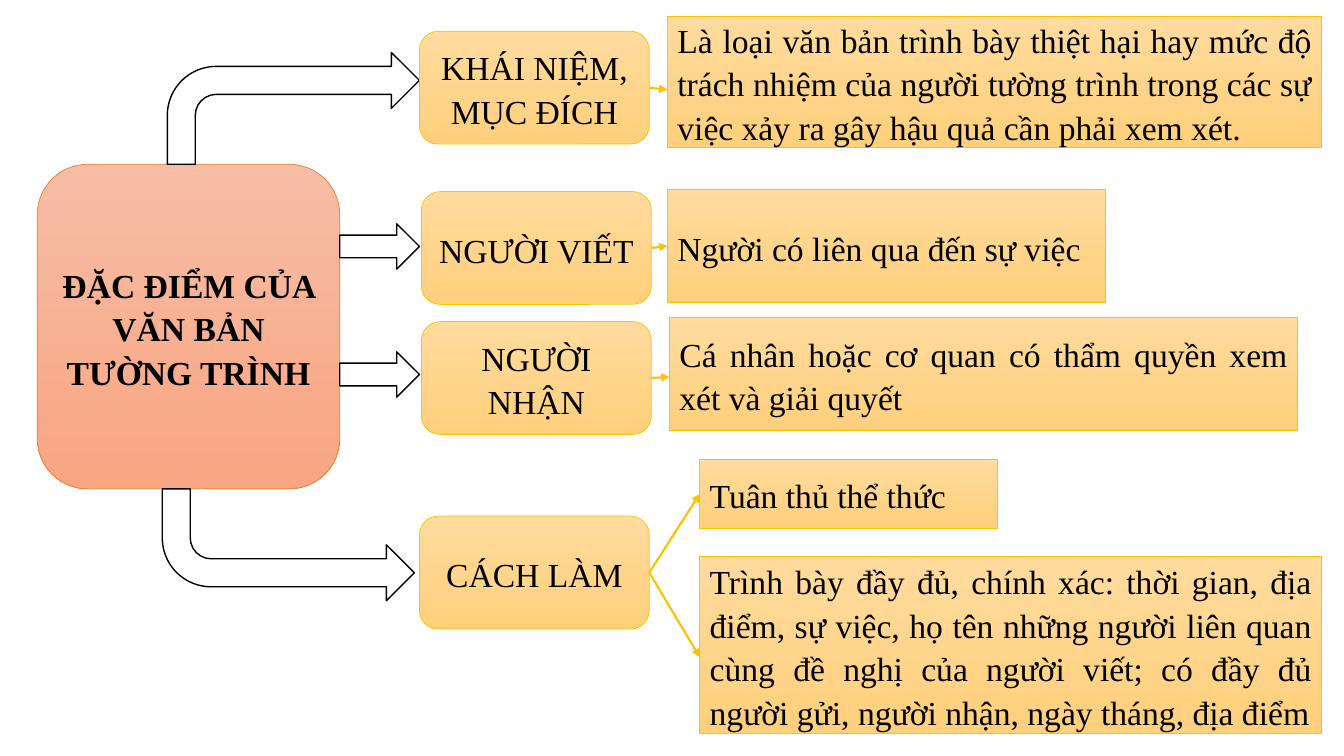
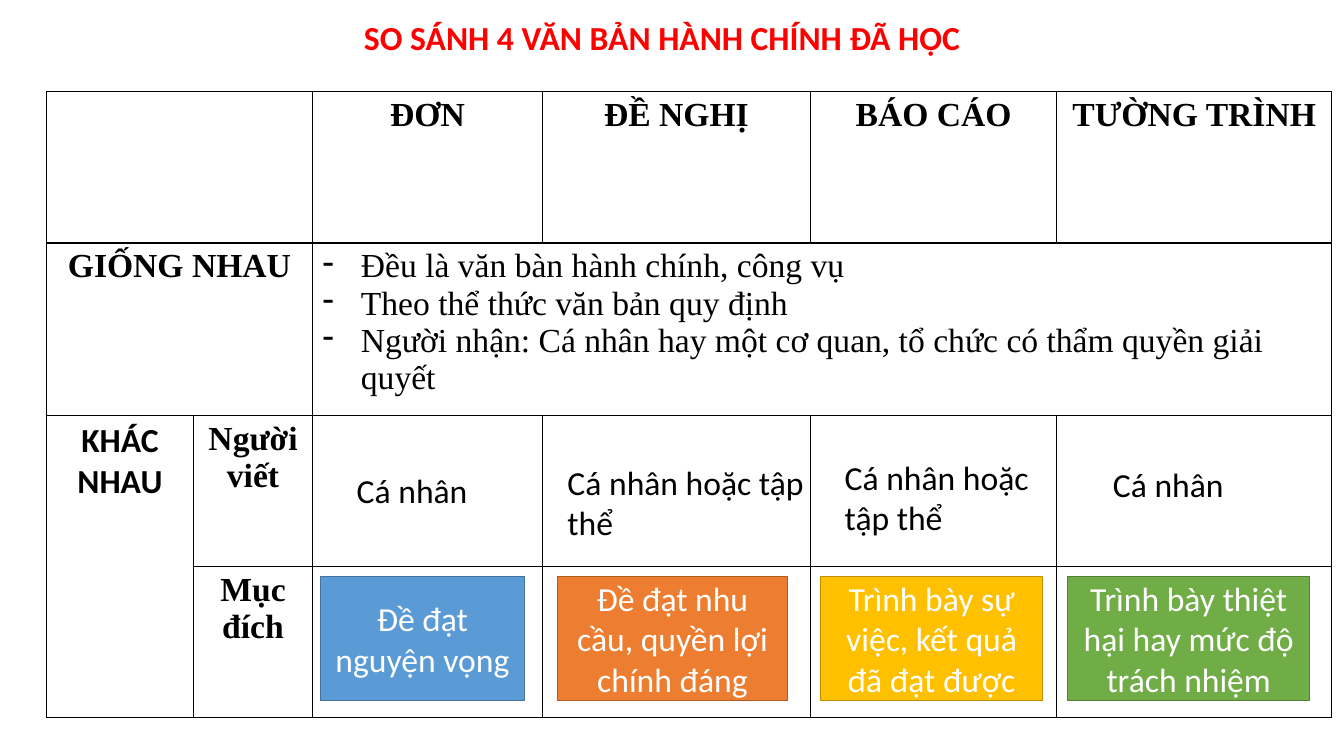
"""Build a two-slide lesson on the features of administrative documents."""
from lxml import etree
from pptx import Presentation
from pptx.dml.color import RGBColor
from pptx.enum.dml import MSO_FILL
from pptx.enum.shapes import MSO_CONNECTOR, MSO_SHAPE
from pptx.enum.text import MSO_ANCHOR, MSO_AUTO_SIZE, PP_ALIGN
from pptx.oxml import parse_xml
from pptx.oxml.ns import nsdecls, qn
from pptx.util import Inches, Pt

RECTANGLE, ROUNDED = MSO_SHAPE.RECTANGLE, MSO_SHAPE.ROUNDED_RECTANGLE
BENT_ARROW, RIGHT_ARROW = MSO_SHAPE.BENT_ARROW, MSO_SHAPE.RIGHT_ARROW
STRAIGHT = MSO_CONNECTOR.STRAIGHT
LEFT, CENTER, JUSTIFY = PP_ALIGN.LEFT, PP_ALIGN.CENTER, PP_ALIGN.JUSTIFY
TOP, MIDDLE = MSO_ANCHOR.TOP, MSO_ANCHOR.MIDDLE
NO_AUTOFIT = MSO_AUTO_SIZE.NONE
RIGHT_SIDE, LEFT_SIDE = 3, 1
SERIF, SANS = "Times New Roman", "Calibri"
COLORS = {
    "black": "000000", "white": "FFFFFF", "red": "FF0000",
    "gold": "FFC000", "gold_top": "FFDB9E", "gold_bottom": "FFD07C", "gold_edge": "BD8E00",
    "orange": "ED7D31", "orange_top": "F7BDA5", "orange_bottom": "F8A582", "orange_edge": "AF5C24",
    "blue": "5B9BD5", "blue_edge": "43739E", "green": "70AD47", "green_edge": "538035",
}
GOLD_GRADIENT = ("gold_top", "gold_bottom")


def write(frame, lines, name=SERIF, color="black", bold=False, alignment=CENTER,
          spacing=1.0, bullet=None):
    """Fill a text frame with one paragraph per line."""
    frame.word_wrap = True
    for index, line in enumerate(lines):
        paragraph = frame.add_paragraph() if index else frame.paragraphs[0]
        if bullet:
            properties = paragraph._p.get_or_add_pPr()
            properties.set("marL", str(Inches(0.38)))
            properties.set("indent", str(-Inches(0.38)))
            etree.SubElement(properties, qn("a:buChar")).set("char", bullet)
        paragraph.alignment = alignment
        paragraph.line_spacing = spacing
        run = paragraph.add_run()
        run.text = line
        for attribute, value in {"name": name, "size": Pt(24), "bold": bold}.items():
            setattr(run.font, attribute, value)
        run.font.color.rgb = RGBColor.from_string(COLORS[color])


def draw(slide, kind, box, fill, line, width):
    """Add a preset shape with a plain fill or a pair of gradient colours."""
    shape = slide.shapes.add_shape(kind, *map(Inches, box))
    shape.shadow.inherit = False
    if isinstance(fill, tuple):
        shape.fill.gradient()
        shape.fill.gradient_angle = 270
        for stop, color in zip(shape.fill.gradient_stops, fill):
            stop.color.rgb = RGBColor.from_string(COLORS[color])
    else:
        shape.fill.solid()
        shape.fill.fore_color.rgb = RGBColor.from_string(COLORS[fill])
    shape.line.color.rgb = RGBColor.from_string(COLORS[line])
    shape.line.width = Pt(width)
    shape.text_frame.vertical_anchor = MIDDLE
    return shape


presentation = Presentation()
presentation.slide_width, presentation.slide_height = Inches(13.33), Inches(7.5)
title_only, blank = presentation.slide_layouts[5], presentation.slide_layouts[6]

slide = presentation.slides.add_slide(blank)
topic = draw(slide, ROUNDED, (0.37, 1.63, 3, 3.22), ("orange_top", "orange_bottom"), "orange", 0.5)
write(topic.text_frame, ["ĐẶC ĐIỂM CỦA VĂN BẢN TƯỜNG TRÌNH"], bold=True, spacing=1.08)

draw(slide, BENT_ARROW, (1.66, 0.52, 2.5, 1.11), "white", "black", 1)
lower_arrow = draw(slide, BENT_ARROW, (1.61, 4.85, 2.5, 1.11), "white", "black", 1)
lower_arrow.rotation = 180
lower_arrow._element.spPr.find(qn("a:xfrm")).set("flipH", "1")
for top in (2.22, 3.49):
    draw(slide, RIGHT_ARROW, (3.37, top, 0.79, 0.45), "white", "black", 1)

branches = [
    ("KHÁI NIỆM, MỤC ĐÍCH", 4.16, 0.31, [
        ((6.62, 0.16, 6.49, 1.3), "Là loại văn bản trình bày thiệt hại hay mức độ trách nhiệm của "
         "người tường trình trong các sự việc xảy ra gây hậu quả cần phải xem xét.", 0.89)]),
    ("NGƯỜI VIẾT", 4.18, 1.9, [
        ((6.62, 1.88, 4.34, 1.12), "Người có liên qua đến sự việc", None)]),
    ("NGƯỜI NHẬN", 4.18, 3.19, [
        ((6.64, 3.15, 6.23, 1.12), "Cá nhân hoặc cơ quan có thẩm quyền xem xét và giải quyết", 3.74)]),
    ("CÁCH LÀM", 4.16, 5.12, [
        ((6.94, 4.56, 2.95, 0.68), "Tuân thủ thể thức", None),
        ((6.94, 5.52, 6.17, 1.76), "Trình bày đầy đủ, chính xác: thời gian, địa điểm, sự việc, "
         "họ tên những người liên quan cùng đề nghị của người viết; có đầy đủ người gửi, "
         "người nhận, ngày tháng, địa điểm", 6.52)]),
]
for heading, left, top, details in branches:
    branch = draw(slide, ROUNDED, (left, top, 2.28, 1.12), GOLD_GRADIENT, "gold", 0.5)
    write(branch.text_frame, [heading], spacing=1.08)
    for box, text, arrow_end in details:
        detail = draw(slide, RECTANGLE, box, GOLD_GRADIENT, "gold", 0.5)
        write(detail.text_frame, [text], alignment=JUSTIFY, spacing=1.08)
        arrow = slide.shapes.add_connector(
            STRAIGHT, 0, 0, Inches(box[0]), Inches(arrow_end or 0))
        arrow.begin_connect(branch, RIGHT_SIDE)
        if arrow_end is None:
            arrow.end_connect(detail, LEFT_SIDE)
        arrow.line.color.rgb = RGBColor.from_string(COLORS["gold"])
        arrow.line.width = Pt(1.5)
        etree.SubElement(arrow.line._get_or_add_ln(), qn("a:tailEnd")).set("type", "triangle")
        etree.SubElement(arrow._element.spPr, qn("a:effectLst"))

slide = presentation.slides.add_slide(title_only)
title = slide.shapes.title
title_place = {"left": 3.51, "top": 0.12, "width": 7.2, "height": 0.5}
for attribute, value in title_place.items():
    setattr(title, attribute, Inches(value))
title.text_frame.auto_size = NO_AUTOFIT
title.text_frame.vertical_anchor = TOP
write(title.text_frame, ["SO SÁNH 4 VĂN BẢN HÀNH CHÍNH ĐÃ HỌC"], SANS, "red", True, LEFT)

column_widths = [1.46, 1.18, 2.28, 2.66, 2.44, 2.73]
row_heights = [1.5, 1.71, 1.5, 1.5]
table = slide.shapes.add_table(
    len(row_heights), len(column_widths), Inches(0.46), Inches(0.91),
    Inches(sum(column_widths)), Inches(sum(row_heights))).table
table.first_row = table.horz_banding = False
for column, width in zip(table.columns, column_widths):
    column.width = Inches(width)
for row, height in zip(table.rows, row_heights):
    row.height = Inches(height)
for cell in table.iter_cells():
    properties = cell._tc.get_or_add_tcPr()
    for side in ("lnL", "lnR", "lnT", "lnB"):
        properties.append(parse_xml(
            f'<a:{side} {nsdecls("a")} w="{Pt(1)}"><a:solidFill>'
            f'<a:srgbClr val="{COLORS["black"]}"/></a:solidFill></a:{side}>'))
    cell.fill.background()
for first, last in (((0, 0), (0, 1)), ((1, 0), (1, 1)), ((1, 2), (1, 5)), ((2, 0), (3, 0))):
    table.cell(*first).merge(table.cell(*last))

headings = {
    (0, 2): "ĐƠN", (0, 3): "ĐỀ NGHỊ", (0, 4): "BÁO CÁO", (0, 5): "TƯỜNG TRÌNH",
    (1, 0): "GIỐNG NHAU", (2, 0): "KHÁC NHAU", (2, 1): "Người viết", (3, 1): "Mục đích",
}
for position, text in headings.items():
    font_name = SANS if position == (2, 0) else SERIF
    write(table.cell(*position).text_frame, [text], font_name, bold=True)
write(table.cell(1, 2).text_frame, [
    "Đều là văn bàn hành chính, công vụ",
    "Theo thể thức văn bản quy định",
    "Người nhận: Cá nhân hay một cơ quan, tổ chức có thẩm quyền giải quyết",
], alignment=LEFT, bullet="-")

writers = [
    ((3.44, 4.61, 2.53, 0.5), "Cá nhân"),
    ((5.53, 4.53, 2.81, 0.91), "Cá nhân hoặc tập thể"),
    ((8.28, 4.48, 2.06, 0.91), "Cá nhân hoặc tập thể"),
    ((10.94, 4.55, 2.53, 0.5), "Cá nhân"),
]
for box, text in writers:
    writer = slide.shapes.add_textbox(*map(Inches, box))
    write(writer.text_frame, [text], SANS, alignment=LEFT)

purposes = [
    (3.18, 2.02, "blue", ["Đề đạt", "nguyện vọng"]),
    (5.53, 2.28, "orange", ["Đề đạt nhu cầu, quyền lợi chính đáng"]),
    (8.14, 2.2, "gold", ["Trình bày sự việc, kết quả đã đạt được"]),
    (10.59, 2.4, "green", ["Trình bày thiệt hại hay mức độ trách nhiệm"]),
]
for left, width, color, lines in purposes:
    purpose = draw(slide, RECTANGLE, (left, 5.72, width, 1.23), color, f"{color}_edge", 1)
    write(purpose.text_frame, lines, SANS, "white")

presentation.save("out.pptx")
